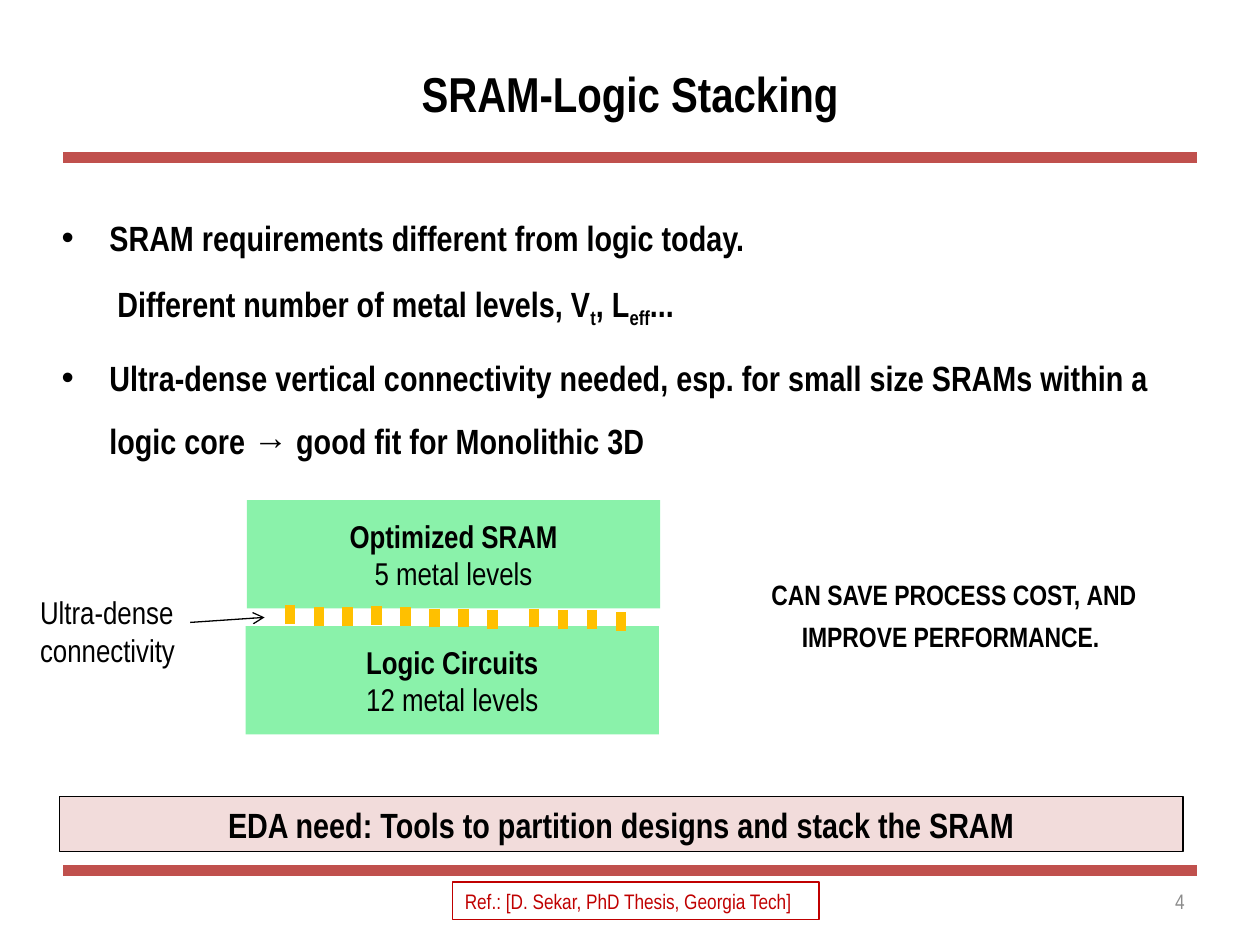
from lxml import etree
from pptx import Presentation
from pptx.dml.color import RGBColor
from pptx.enum.shapes import MSO_CONNECTOR, MSO_SHAPE
from pptx.enum.text import MSO_ANCHOR, PP_ALIGN
from pptx.oxml.ns import qn
from pptx.util import Inches, Pt

LEFT, CENTER, RIGHT = PP_ALIGN.LEFT, PP_ALIGN.CENTER, PP_ALIGN.RIGHT
TOP, MIDDLE = MSO_ANCHOR.TOP, MSO_ANCHOR.MIDDLE
RECT, STRAIGHT = MSO_SHAPE.RECTANGLE, MSO_CONNECTOR.STRAIGHT
BLACK = RGBColor(0x00, 0x00, 0x00)
GRAY = RGBColor(0x8C, 0x8C, 0x8C)
BRICK = RGBColor(0xC0, 0x50, 0x4D)
RED = RGBColor(0xC0, 0x00, 0x00)
PINK = RGBColor(0xF2, 0xDC, 0xDB)
GREEN = RGBColor(0x8A, 0xF2, 0xAA)
GOLD = RGBColor(0xFF, 0xC0, 0x00)
FONT = "Arial Narrow"


def set_font(para, size, color=BLACK, bold=False, align=LEFT):
    para.alignment = align
    para.font.name = FONT
    para.font.size = Pt(size)
    para.font.bold = bold
    para.font.color.rgb = color


def add_text(slide, box, text, size, color=BLACK, bold=False, align=LEFT, anchor=TOP):
    shape = slide.shapes.add_textbox(*map(Inches, box))
    frame = shape.text_frame
    frame.word_wrap = True
    frame.vertical_anchor = anchor
    para = frame.paragraphs[0]
    para.text = text
    set_font(para, size, color, bold, align)
    return para


def add_rect(slide, box, fill=None, line=None):
    shape = slide.shapes.add_shape(RECT, *map(Inches, box))
    shape.shadow.inherit = False
    if fill is None:
        shape.fill.background()
    else:
        shape.fill.solid()
        shape.fill.fore_color.rgb = fill
    if line is None:
        shape.line.fill.background()
    else:
        shape.line.color.rgb = line
        shape.line.width = Pt(0.75)
    shape.text_frame.word_wrap = True
    shape.text_frame.vertical_anchor = MIDDLE
    return shape.text_frame


def add_line(slide, ends, color, width, arrow=False):
    line = slide.shapes.add_connector(STRAIGHT, *map(Inches, ends))
    line.line.color.rgb = color
    line.line.width = Pt(width)
    props = line._element.spPr
    if arrow:
        etree.SubElement(props.find(qn("a:ln")), qn("a:tailEnd"), type="arrow")
    etree.SubElement(props, qn("a:effectLst"))


def add_frame(slide, box):
    left, top, width, height = box
    for y in (top, top + height):
        add_line(slide, (left, y, left + width, y), BRICK, 6)
    add_text(slide, (left, 0.3, width, 0.87), "SRAM-Logic Stacking", 28,
             bold=True, align=CENTER, anchor=MIDDLE)
    add_text(slide, (7.17, 6.95, 2.33, 0.4), "4", 12, GRAY, align=RIGHT, anchor=MIDDLE)


def add_points(slide, box):
    frame = slide.shapes.add_textbox(*map(Inches, box)).text_frame
    frame.word_wrap = True
    points = [
        [("SRAM requirements different from logic today.\v Different number of metal levels, V", 0),
         ("t", -25), (", L", 0), ("eff", -25), ("...", 0)],
        [("Ultra-dense vertical connectivity needed, esp. for small size SRAMs "
          "within a logic core → good fit for Monolithic 3D", 0)],
    ]
    for i, parts in enumerate(points):
        para = frame.paragraphs[0] if i == 0 else frame.add_paragraph()
        para.line_spacing = 1.5
        if i:
            para.space_before = Pt(3)
        props = para._p.get_or_add_pPr()
        props.set("marL", str(Inches(0.38)))
        props.set("indent", str(Inches(-0.38)))
        etree.SubElement(props, qn("a:buFont"), typeface="Arial")
        etree.SubElement(props, qn("a:buChar"), char="•")
        set_font(para, 20, bold=True)
        for text, base in parts:
            for j, piece in enumerate(text.split("\v")):
                if j:
                    para.add_line_break()
                run = para.add_run()
                run.text = piece
                if base:
                    run._r.get_or_add_rPr().set("baseline", str(base * 1000))


def add_stack(slide, box):
    left, top, width, height = box
    tier = 0.86
    tiers = [(left, top + height - tier, "Logic Circuits", "12 metal levels"),
             (left + 0.01, top, "Optimized SRAM", "5 metal levels")]
    for x, y, name, note in tiers:
        frame = add_rect(slide, (x, y, width, tier), GREEN)
        frame.text = f"{name}\n{note}"
        for para, bold in zip(frame.paragraphs, (True, False)):
            set_font(para, 18, bold=bold, align=CENTER)
    drops = (0.83, 0.85, 0.85, 0.84, 0.85, 0.86, 0.86, 0.87, 0.86, 0.87, 0.87, 0.89)
    for i, drop in enumerate(drops):
        x = left + 0.35 + 0.23 * i + (0.1 if i > 7 else 0)
        y = top + drop
        add_line(slide, (x, y, x, y + 0.15), GOLD, 6)
    add_text(slide, (0.22, 4.66, 1.54, 0.71), "Ultra-dense connectivity", 18)
    add_line(slide, (1.51, 4.94, 2.1, 4.9), BLACK, 0.75, arrow=True)


def add_claim(slide, box):
    para = add_text(slide, box, "can save process cost, and improve performance. ",
                    20, bold=True, align=CENTER)
    para.runs[0]._r.get_or_add_rPr().set("cap", "small")


def add_label(slide, box, text, size, color, line, fill=None, bold=False, align=LEFT):
    para = add_rect(slide, box, fill, line).paragraphs[0]
    para.text = text
    set_font(para, size, color, bold, align)


def main():
    deck = Presentation()
    deck.slide_width, deck.slide_height = Inches(10), Inches(7.5)
    slide = deck.slides.add_slide(deck.slide_layouts[6])
    add_frame(slide, (0.5, 1.25, 9, 5.66))
    add_points(slide, (0.39, 1.5, 9, 2.17))
    add_stack(slide, (1.95, 3.97, 3.28, 1.86))
    add_claim(slide, (5.87, 4.48, 3.4, 0.77))
    add_label(slide, (3.59, 7, 2.91, 0.3), "Ref.: [D. Sekar, PhD Thesis, Georgia Tech]",
              12, RED, RED)
    add_label(slide, (0.47, 6.32, 8.92, 0.44),
              "EDA need: Tools to partition designs and stack the SRAM",
              20, BLACK, BLACK, PINK, True, CENTER)
    deck.save("out.pptx")


if __name__ == "__main__":
    main()
